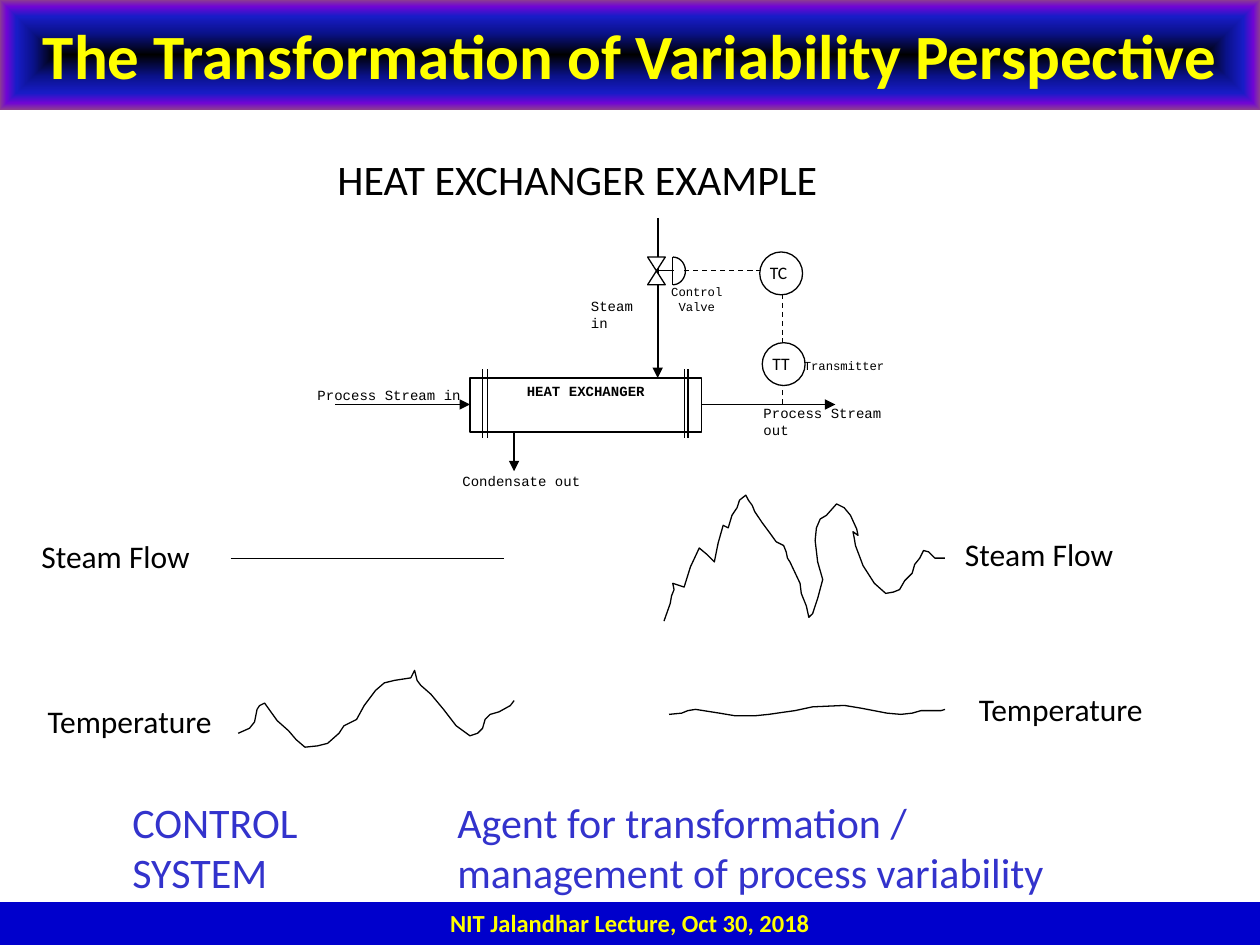
"""Build the slide on process variability around a heat exchanger."""
import dataclasses
import math
import typing

import lxml.etree
import pptx
import pptx.dml.color
import pptx.enum.dml
import pptx.enum.shapes
import pptx.enum.text
import pptx.oxml
import pptx.oxml.ns
import pptx.util

Point = tuple[float, float]
Box = tuple[float, float, float, float]
Kind = pptx.enum.shapes.MSO_SHAPE
Align = pptx.enum.text.PP_ALIGN


@dataclasses.dataclass(frozen=True)
class Theme:
    """Hold colours, fonts, type sizes and line widths."""
    ink: str = "000000"
    paper: str = "FFFFFF"
    bar: str = "0000CC"
    gold: str = "FFFF00"
    note: str = "3333CC"
    glow: tuple = ((0, "000000"), (40, "0A128C"), (70, "181CC7"), (88, "7005D4"), (100, "8C3D91"))
    sans: str = "Calibri"
    mono: str = "Courier New"
    title: int = 36
    head: int = 24
    body: int = 18
    foot: int = 14
    tag: int = 10
    label: int = 8
    small: int = 7
    thin: float = 0.75
    thick: float = 1


THEME = Theme()


@dataclasses.dataclass(frozen=True)
class Label:
    """Describe a text and its look."""
    text: str
    box: Box
    size: int
    font: str = THEME.sans
    color: str = THEME.ink
    bold: bool = False
    align: typing.Any = Align.LEFT
    inset: Point = (0.1, 0.05)
    wrap: bool = True
    middle: bool = False


@dataclasses.dataclass(frozen=True)
class Pipe:
    """Describe a straight line."""
    start: Point
    end: Point
    width: float = THEME.thin
    arrow: bool = False
    dash: bool = False


def inch(size: float) -> pptx.util.Cm:
    """Turn inches into a length."""
    return pptx.util.Cm(size * 2.54)


def tint(code: str) -> pptx.dml.color.RGBColor:
    """Turn a hex code into a colour."""
    return pptx.dml.color.RGBColor.from_string(code)


def write(shape: typing.Any, label: Label) -> None:
    """Put a label's text into a shape."""
    frame = shape.text_frame
    frame.text = label.text
    frame.word_wrap = label.wrap
    anchor = pptx.enum.text.MSO_ANCHOR
    frame.vertical_anchor = anchor.MIDDLE if label.middle else anchor.TOP
    frame.margin_left = frame.margin_right = inch(label.inset[0])
    frame.margin_top = frame.margin_bottom = inch(label.inset[1])
    for para in frame.paragraphs:
        para.alignment = label.align
        for run in para.runs:
            run.font.name = label.font
            run.font.size = pptx.util.Pt(label.size)
            run.font.bold = label.bold
            run.font.color.rgb = tint(label.color)


def add_label(slide: typing.Any, label: Label) -> None:
    """Add a free text."""
    write(slide.shapes.add_textbox(*map(inch, label.box)), label)


def add_form(slide: typing.Any, kind: typing.Any, box: Box, fill: str = THEME.paper,
             line: bool = True, turn: float = 0) -> typing.Any:
    """Add a preset shape."""
    shape = slide.shapes.add_shape(kind, *map(inch, box))
    shape.shadow.inherit = False
    shape.rotation = turn
    shape.fill.solid()
    shape.fill.fore_color.rgb = tint(fill)
    if line:
        shape.line.color.rgb = tint(THEME.ink)
        shape.line.width = pptx.util.Pt(THEME.thin)
    else:
        shape.line.fill.background()
    return shape


def add_pipe(slide: typing.Any, pipe: Pipe) -> None:
    """Add a straight line, dashed or with an arrowhead."""
    line = slide.shapes.add_connector(pptx.enum.shapes.MSO_CONNECTOR.STRAIGHT,
                                      *map(inch, pipe.start + pipe.end))
    line.line.color.rgb = tint(THEME.ink)
    line.line.width = pptx.util.Pt(pipe.width)
    if pipe.dash:
        line.line.dash_style = pptx.enum.dml.MSO_LINE.DASH
    props = line.element.spPr
    name = pptx.oxml.ns.qn
    if pipe.arrow:
        lxml.etree.SubElement(props.find(name("a:ln")), name("a:tailEnd"), type="triangle")
    lxml.etree.SubElement(props, name("a:effectLst"))


def add_trace(slide: typing.Any, points: list[Point]) -> None:
    """Add an open curve through points."""
    spots = [(inch(left), inch(top)) for left, top in points]
    pen = slide.shapes.build_freeform(*spots[0])
    pen.add_line_segments(spots[1:], close=False)
    shape = pen.convert_to_shape()
    shape.shadow.inherit = False
    shape.fill.background()
    shape.line.color.rgb = tint(THEME.ink)
    shape.line.width = pptx.util.Pt(THEME.thin)


def add_glow(shape: typing.Any) -> None:
    """Fill a shape with the gradient that runs out from its centre."""
    stops = "".join(f'<a:gs pos="{pos * 1000}"><a:srgbClr val="{code}"/></a:gs>'
                    for pos, code in THEME.glow)
    fill = pptx.oxml.parse_xml(
        f'<a:gradFill {pptx.oxml.ns.nsdecls("a")} rotWithShape="1"><a:gsLst>{stops}</a:gsLst>'
        '<a:path path="rect"><a:fillToRect l="50000" t="50000" r="50000" b="50000"/></a:path>'
        '</a:gradFill>')
    props = shape.element.spPr
    props.replace(props.find(pptx.oxml.ns.qn("a:solidFill")), fill)


def add_bars(slide: typing.Any) -> None:
    """Add the title bar and the footer bar."""
    foot = Label("NIT Jalandhar Lecture, Oct 30, 2018", (0, 7.16, 10, 0.34), THEME.foot,
                 color=THEME.gold, bold=True, align=Align.CENTER)
    title = Label("The Transformation of Variability Perspective", (0, 0, 10, 0.87), THEME.title,
                  color=THEME.gold, bold=True, align=Align.CENTER, middle=True)
    for label in (foot, title):
        bar = add_form(slide, Kind.RECTANGLE, label.box, THEME.bar, line=False)
        write(bar, label)
    add_glow(bar)


def add_plant(slide: typing.Any) -> None:
    """Add the exchanger with its streams, valve and control loop."""
    for start, end in (((2.66, 3.21), (3.73, 3.21)), ((5.57, 3.21), (6.63, 3.21)),
                       ((5.22, 1.73), (5.22, 3)), ((4.08, 3.43), (4.08, 3.74))):
        add_pipe(slide, Pipe(start, end, THEME.thick, arrow=True))
    for start, end in (((6.21, 3.21), (6.21, 2.68)), ((5.43, 2.15), (6.06, 2.15)),
                       ((6.21, 2.26), (6.21, 2.77))):
        add_pipe(slide, Pipe(start, end, dash=True))
    for top, turn in ((2.04, 180), (2.15, 0)):
        add_form(slide, Kind.ISOSCELES_TRIANGLE, (5.14, top, 0.14, 0.11), turn=turn)
    angles = [math.radians(step) for step in range(-90, 91, 10)]
    add_trace(slide, [(5.34 + 0.1 * math.cos(a), 2.15 + 0.11 * math.sin(a)) for a in angles])
    add_pipe(slide, Pipe((5.34, 2.04), (5.34, 2.26)))
    add_pipe(slide, Pipe((5.21, 2.15), (5.35, 2.15)))
    shell = Label("HEAT EXCHANGER", (3.73, 3, 1.84, 0.43), THEME.label, THEME.mono,
                  bold=True, align=Align.CENTER, inset=(0.08, 0.04))
    write(add_form(slide, Kind.RECTANGLE, shell.box), shell)
    for left in (3.83, 3.87, 5.43, 5.46):
        add_pipe(slide, Pipe((left, 2.93), (left, 3.48)))
    for text, left, top in (("TC", 6.03, 2), ("TT", 6.05, 2.72)):
        add_form(slide, Kind.OVAL, (left, top, 0.34, 0.34))
        add_label(slide, Label(text, (left + 0.08, top + 0.08, 0.22, 0.22), THEME.tag, inset=(0, 0)))
    for text, box, size, align, inset in (
            ("Condensate out", (3.59, 3.71, 1.2, 0.32), THEME.label, Align.LEFT, (0.08, 0.04)),
            ("Process Stream in", (2.52, 3.07, 1.2, 0.43), THEME.label, Align.LEFT, (0, 0)),
            ("Steam in", (4.69, 2.36, 0.53, 0.64), THEME.label, Align.LEFT, (0, 0)),
            ("Control\nValve", (5.14, 2.26, 0.78, 0.32), THEME.small, Align.CENTER, (0, 0)),
            ("Process Stream out", (6.06, 3.21, 1.2, 0.43), THEME.label, Align.LEFT, (0, 0)),
            ("Transmitter", (6.38, 2.84, 0.78, 0.32), THEME.small, Align.LEFT, (0, 0))):
        add_label(slide, Label(text, box, size, THEME.mono, align=align, inset=inset))


def add_trends(slide: typing.Any) -> None:
    """Add the flow and temperature curves with their names."""
    add_pipe(slide, Pipe((1.83, 4.43), (4, 4.43)))
    swing = [(1.89, 5.82), (1.98, 5.78), (2.02, 5.73), (2.04, 5.63), (2.06, 5.6), (2.1, 5.58),
             (2.2, 5.72), (2.29, 5.8), (2.35, 5.87), (2.42, 5.93), (2.52, 5.92), (2.6, 5.9),
             (2.69, 5.82), (2.73, 5.76), (2.83, 5.71), (2.89, 5.6), (2.98, 5.48), (3.05, 5.42),
             (3.13, 5.4), (3.26, 5.38), (3.29, 5.32), (3.31, 5.4), (3.34, 5.44), (3.42, 5.51),
             (3.52, 5.63), (3.62, 5.76), (3.73, 5.84), (3.79, 5.82), (3.83, 5.78), (3.85, 5.71),
             (3.89, 5.67), (3.96, 5.65), (4.05, 5.6), (4.08, 5.56)]
    surge = [(5.27, 4.93), (5.32, 4.79), (5.33, 4.73), (5.35, 4.68), (5.34, 4.63), (5.43, 4.66),
             (5.48, 4.5), (5.55, 4.35), (5.61, 4.4), (5.67, 4.46), (5.7, 4.31), (5.74, 4.17),
             (5.78, 4.19), (5.81, 4.09), (5.85, 4.03), (5.87, 3.97), (5.92, 3.93), (5.94, 3.97),
             (5.97, 4.01), (5.99, 4.06), (6.05, 4.15), (6.11, 4.23), (6.16, 4.3), (6.22, 4.33),
             (6.24, 4.38), (6.25, 4.43), (6.27, 4.46), (6.35, 4.63), (6.36, 4.71), (6.4, 4.81),
             (6.42, 4.9), (6.45, 4.87), (6.49, 4.75), (6.53, 4.6), (6.49, 4.46), (6.47, 4.29),
             (6.48, 4.19), (6.51, 4.12), (6.56, 4.09), (6.64, 4), (6.7, 4.03), (6.75, 4.09),
             (6.8, 4.2), (6.81, 4.25), (6.77, 4.22), (6.78, 4.27), (6.79, 4.33), (6.85, 4.49),
             (6.94, 4.63), (7.03, 4.71), (7.09, 4.7), (7.14, 4.68), (7.18, 4.61), (7.24, 4.55),
             (7.26, 4.48), (7.3, 4.43), (7.33, 4.37), (7.37, 4.38), (7.42, 4.43), (7.5, 4.43)]
    calm = [(5.31, 5.67), (5.41, 5.66), (5.46, 5.64), (5.52, 5.63), (5.71, 5.66), (5.83, 5.68),
            (6, 5.68), (6.1, 5.67), (6.24, 5.65), (6.31, 5.64), (6.45, 5.61), (6.67, 5.6),
            (6.71, 5.6), (6.83, 5.62), (7.04, 5.66), (7.15, 5.67), (7.24, 5.66), (7.31, 5.64),
            (7.47, 5.64), (7.5, 5.63)]
    for points in (swing, surge, calm):
        add_trace(slide, points)
    for text, left, top, width in (("Steam Flow", 0.23, 4.21, 1.52), ("Temperature", 0.28, 5.52, 1.63),
                                   ("Steam Flow", 7.56, 4.2, 1.52), ("Temperature", 7.67, 5.43, 1.63)):
        add_label(slide, Label(text, (left, top, width, 0.4), THEME.body, wrap=False))


def main() -> None:
    """Build and save the slide."""
    deck = pptx.Presentation()
    deck.slide_width, deck.slide_height = inch(10), inch(7.5)
    slide = deck.slides.add_slide(deck.slide_layouts[6])
    add_bars(slide)
    add_label(slide, Label("HEAT EXCHANGER EXAMPLE", (2.58, 1.17, 4.96, 0.5), THEME.head, wrap=False))
    add_plant(slide)
    add_trends(slide)
    for text, left, width in (("CONTROL\nSYSTEM", 0.75, 1.92),
                              ("Agent for transformation / management of process variability", 3.33, 5.32)):
        add_label(slide, Label(text, (left, 6.27, width, 0.9), THEME.head, color=THEME.note,
                               inset=(0.3, 0.05)))
    deck.save("out.pptx")


if __name__ == "__main__":
    main()
